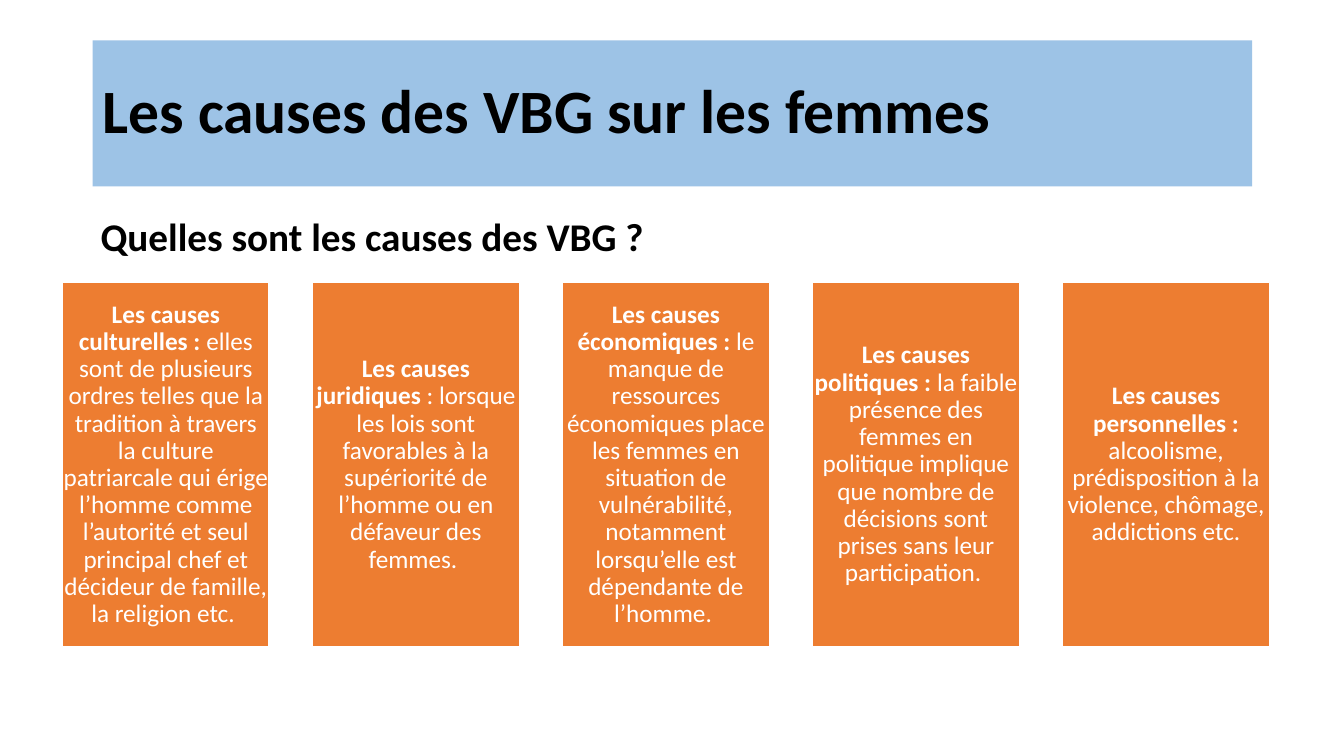
from dataclasses import dataclass

from pptx import Presentation
from pptx.dml.color import RGBColor
from pptx.enum.shapes import MSO_SHAPE
from pptx.enum.text import MSO_ANCHOR, PP_ALIGN
from pptx.shapes.autoshape import Shape
from pptx.slide import Slide
from pptx.text.text import _Run
from pptx.util import Emu, Pt

EMU_PER_PX = 9144  # 100 px to the inch
FONT = "Calibri"
BLACK = RGBColor(0x00, 0x00, 0x00)
WHITE = RGBColor(0xFF, 0xFF, 0xFF)
BLUE = RGBColor(0x9D, 0xC3, 0xE6)
ORANGE = RGBColor(0xED, 0x7D, 0x31)

CARD_LEFT, CARD_TOP = 62, 280
CARD_WIDTH, CARD_HEIGHT = 205, 362
CARD_PITCH = 248
CARD_INSET = 1


@dataclass(frozen=True)
class Cause:
    heading: str
    detail: str


CAUSES = [
    Cause("Les causes culturelles : ",
          "elles sont de plusieurs ordres telles que la tradition à travers la "
          "culture patriarcale qui érige l’homme comme l’autorité et seul "
          "principal chef et décideur de famille, la religion etc. "),
    Cause("Les causes juridiques ",
          ": lorsque les lois sont favorables à la supériorité de l’homme ou "
          "en défaveur des femmes. "),
    Cause("Les causes économiques : ",
          "le manque de ressources économiques place les femmes en situation "
          "de vulnérabilité, notamment lorsqu’elle est dépendante de l’homme. "),
    Cause("Les causes politiques : ",
          "la faible présence des femmes en politique implique que nombre de "
          "décisions sont prises sans leur participation. "),
    Cause("Les causes personnelles : ",
          "alcoolisme, prédisposition à la violence, chômage, addictions etc."),
]


def px(length: int) -> Emu:
    return Emu(length * EMU_PER_PX)


def format_run(run: _Run, size: int, color: RGBColor, bold: bool) -> None:
    run.font.name = FONT
    run.font.size = Pt(size)
    run.font.color.rgb = color
    run.font.bold = bold


def add_panel(slide: Slide, left: int, top: int, width: int, height: int,
              fill: RGBColor) -> Shape:
    """Add a plain filled rectangle whose text wraps and is centred vertically."""
    panel = slide.shapes.add_shape(
        MSO_SHAPE.RECTANGLE, px(left), px(top), px(width), px(height))
    panel.shadow.inherit = False
    panel.fill.solid()
    panel.fill.fore_color.rgb = fill
    panel.line.fill.background()
    panel.text_frame.word_wrap = True
    panel.text_frame.vertical_anchor = MSO_ANCHOR.MIDDLE
    return panel


def write_line(shape: Shape, text: str, size: int, align: PP_ALIGN) -> None:
    shape.text_frame.text = text
    paragraph = shape.text_frame.paragraphs[0]
    paragraph.alignment = align
    paragraph.line_spacing = 0.9
    format_run(paragraph.runs[0], size, BLACK, True)


def add_cause_card(slide: Slide, cause: Cause, left: int) -> None:
    card = add_panel(slide, left, CARD_TOP, CARD_WIDTH, CARD_HEIGHT, ORANGE)
    card.line.color.rgb = WHITE
    card.line.width = Pt(1)
    frame = card.text_frame
    frame.margin_left = frame.margin_right = px(CARD_INSET)
    frame.margin_top = frame.margin_bottom = px(CARD_INSET)
    paragraph = frame.paragraphs[0]
    paragraph.alignment = PP_ALIGN.CENTER
    paragraph.line_spacing = 0.9
    for text, bold in ((cause.heading, True), (cause.detail, False)):
        run = paragraph.add_run()
        run.text = text
        format_run(run, 18, WHITE, bold)


def main() -> None:
    presentation = Presentation()
    presentation.slide_width, presentation.slide_height = px(1333), px(750)
    slide = presentation.slides.add_slide(presentation.slide_layouts[6])

    title = add_panel(slide, 92, 40, 1150, 145, BLUE)
    write_line(title, "Les causes des VBG sur les femmes", 44, PP_ALIGN.LEFT)

    question = slide.shapes.add_textbox(px(90), px(211), px(1150), px(476))
    question.text_frame.word_wrap = True
    write_line(question, "Quelles sont les causes des VBG ?", 28, PP_ALIGN.JUSTIFY)

    for index, cause in enumerate(CAUSES):
        add_cause_card(slide, cause, CARD_LEFT + index * CARD_PITCH)

    presentation.save("out.pptx")


if __name__ == "__main__":
    main()
